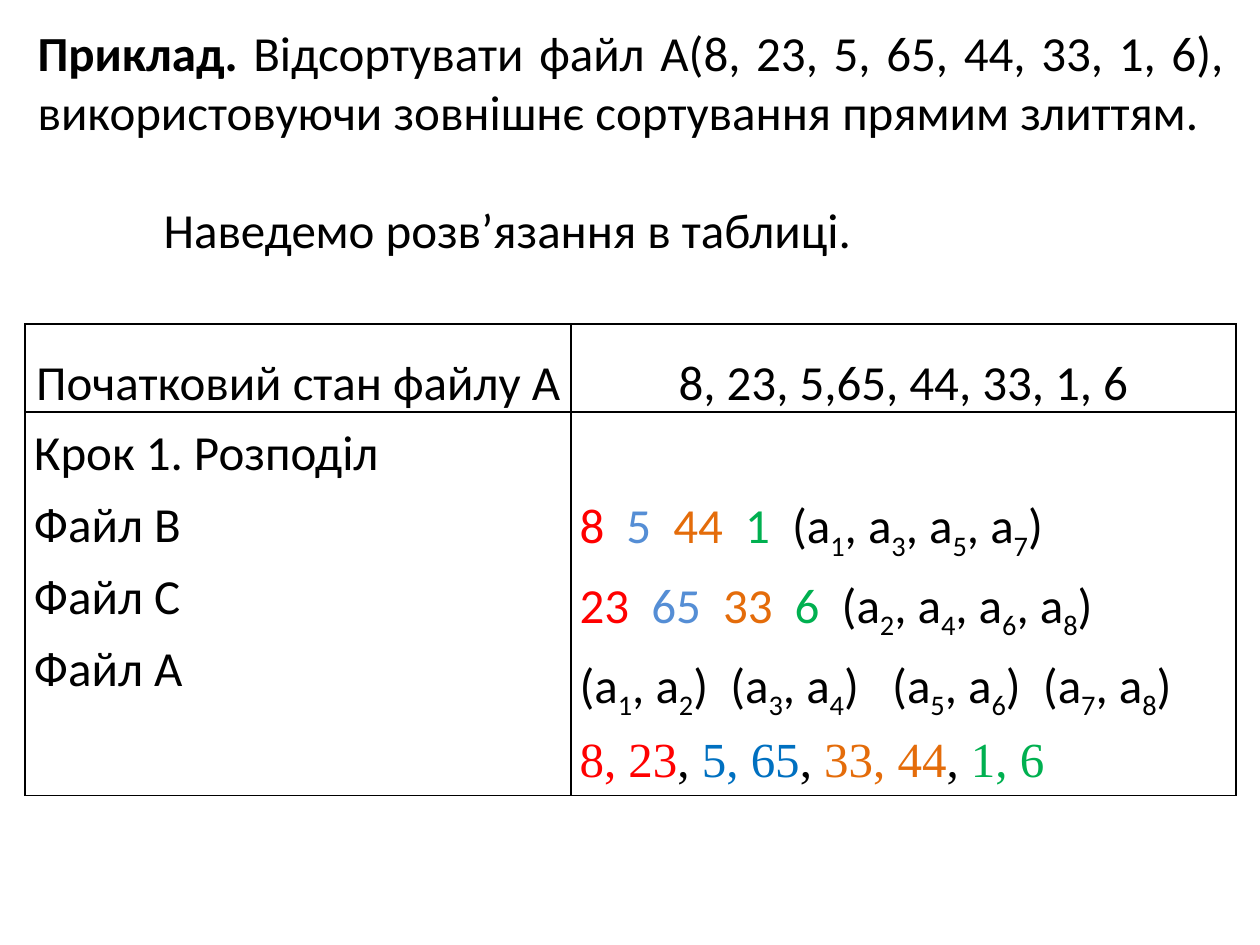
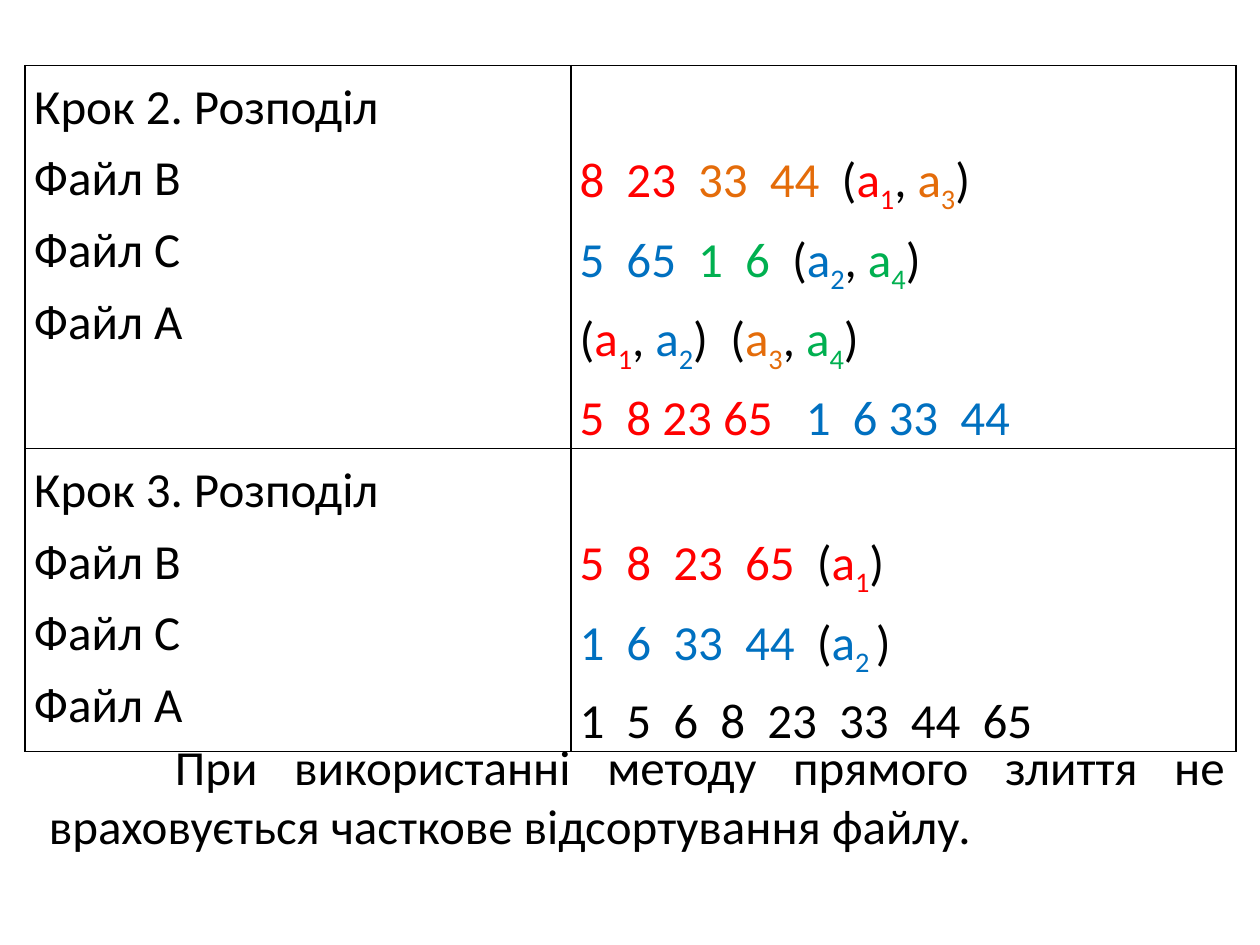
"""Build two slides on external sorting by direct merging."""
from typing import NamedTuple

from pptx import Presentation
from pptx.dml.color import RGBColor
from pptx.enum.text import MSO_AUTO_SIZE, PP_ALIGN
from pptx.oxml import parse_xml
from pptx.oxml.ns import nsdecls
from pptx.util import Inches, Pt

CENTER, JUSTIFY = PP_ALIGN.CENTER, PP_ALIGN.JUSTIFY
GROW = MSO_AUTO_SIZE.SHAPE_TO_FIT_TEXT
BLACK, RED, GREEN = "000000", "FF0000", "00B050"
BLUE, SKY, ORANGE = "0070C0", "558ED5", "E46C0A"
SANS, SERIF = "Calibri", "Times New Roman"
SIZE = Pt(28)
LEFT = 0.2
COLS = (4.33, 5.28)
SIDE, LINE = 0.07, 0.57
TAB = 1.0


class Run(NamedTuple):
    """Hold a piece of text with its look."""
    text: str
    color: str = BLACK
    sub: bool = False
    bold: bool = False
    font: str = SANS


class Para(NamedTuple):
    """Hold the runs and layout of one paragraph."""
    runs: list[Run]
    align: PP_ALIGN = JUSTIFY
    space: float = 1.0
    indent: float = 0
    before: float = 0


class Cell(NamedTuple):
    """Hold the paragraphs and top margin of one cell."""
    paras: list[Para]
    top: float = 0


class Row(NamedTuple):
    """Hold the height and cells of one table row."""
    height: float
    cells: list[Cell]


def rgb(code: str) -> RGBColor:
    """Turn a hex string into a colour."""
    return RGBColor.from_string(code)


def write(frame, paras: list[Para]) -> None:
    """Fill a text frame run by run."""
    frame.word_wrap = True
    for spot, para in enumerate(paras):
        line = frame.add_paragraph() if spot else frame.paragraphs[0]
        line.alignment, line.line_spacing = para.align, para.space
        line.space_before = Pt(para.before)
        if para.indent:
            line._p.get_or_add_pPr().set("indent", str(Inches(para.indent)))
        for item in para.runs:
            run = line.add_run()
            run.text = item.text
            font = run.font
            font.name, font.size, font.bold = item.font, SIZE, item.bold
            font.color.rgb = rgb(item.color)
            if item.sub:
                run._r.get_or_add_rPr().set("baseline", "-25000")


def add_note(slide, left: float, top: float, width: float, height: float,
             paras: list[Para]) -> None:
    """Add a wrapping text box."""
    box = slide.shapes.add_textbox(*map(Inches, (left, top, width, height)))
    write(box.text_frame, paras)
    box.text_frame.auto_size = GROW


def frame_cell(cell) -> None:
    """Draw thin black borders around an unfilled cell."""
    props = cell._tc.get_or_add_tcPr()
    for edge in "LRTB":
        props.append(parse_xml(
            f'<a:ln{edge} {nsdecls("a")} w="{Pt(1)}"><a:solidFill>'
            f'<a:srgbClr val="{BLACK}"/></a:solidFill></a:ln{edge}>'))
    cell.fill.background()


def add_grid(slide, top: float, rows: list[Row]) -> None:
    """Add a bordered table of steps."""
    area = (LEFT, top, sum(COLS), sum(row.height for row in rows))
    table = slide.shapes.add_table(
        len(rows), len(COLS), *map(Inches, area)).table
    table.first_row = table.horz_banding = False
    for col, width in zip(table.columns, COLS):
        col.width = Inches(width)
    for line, row in zip(table.rows, rows):
        line.height = Inches(row.height)
        for cell, data in zip(line.cells, row.cells):
            cell.margin_left = cell.margin_right = Inches(SIDE)
            cell.margin_top, cell.margin_bottom = Inches(data.top), 0
            frame_cell(cell)
            write(cell.text_frame, data.paras)


def group(*terms: tuple[str, str]) -> list[Run]:
    """List indexed terms in brackets, each with its colour."""
    runs = [Run("(")]
    for spot, (index, color) in enumerate(terms):
        if spot:
            runs.append(Run(", "))
        runs += [Run("а", color), Run(index, color, sub=True)]
    return runs + [Run(")")]


def plain(digits: str) -> list[Run]:
    """List black terms in brackets."""
    return group(*((digit, BLACK) for digit in digits))


def head(text: str) -> Cell:
    """Make a centred heading cell."""
    return Cell([Para([Run(text)], CENTER, 1.5)])


def step(number: int, height: float, lines: list[list[Run]]) -> Row:
    """Make the row of one sorting step."""
    names = (f"Крок {number}. Розподіл", "Файл В", "Файл С", "Файл А")
    left = Cell([Para([Run(name)], space=1.2) for name in names])
    right = Cell([Para(runs, space=1.2) for runs in lines], LINE)
    return Row(height, [left, right])


def add_first(slide) -> None:
    """Draw the task and the first step."""
    add_note(slide, LEFT, 0.13, 9.61, 1.99, [
        Para([Run("Приклад. ", bold=True),
              Run("Відсортувати файл А(8, 23, 5, 65, 44, 33, 1, 6), "
                  "використовуючи зовнішнє сортування прямим злиттям.")]),
        Para([Run("Наведемо розв’язання в таблиці.")],
             indent=TAB, before=34)])
    hues = (RED, SKY, ORANGE, GREEN)
    files = [
        [Run(f"{num}  ", hue) for num, hue in zip(nums, hues)] + plain(digits)
        for nums, digits in (((8, 5, 44, 1), "1357"),
                             ((23, 65, 33, 6), "2468"))]
    pairs = [*plain("12"), Run("  "), *plain("34"), Run("   "),
             *plain("56"), Run("  "), *plain("78")]
    merged = []
    for text, hue in (("8, 23", RED), ("5, 65", BLUE),
                      ("33, 44", ORANGE), ("1, 6", GREEN)):
        if merged:
            merged.append(Run(", ", font=SERIF))
        merged.append(Run(text, hue, font=SERIF))
    add_grid(slide, 2.57, [
        Row(0.7, [head("Початковий стан файлу А"),
                  head("8, 23, 5,65, 44, 33, 1, 6")]),
        step(1, 3.03, [*files, pairs, merged])])


def add_second(slide) -> None:
    """Draw the last two steps and the remark."""
    one, two = ("1", RED), ("2", BLUE)
    three, four = ("3", ORANGE), ("4", GREEN)
    add_grid(slide, 0.52, [
        step(2, 3.04, [
            [Run("8  23  ", RED), Run("33  44  ", ORANGE),
             *group(one, three)],
            [Run("5  65  ", BLUE), Run("1  6  ", GREEN), *group(two, four)],
            [*group(one, two), Run("  "), *group(three, four)],
            [Run("5  8 23 65 ", RED), Run("  1  6 33  44", BLUE)]]),
        step(3, 2.4, [
            [Run("5  8  23  65  ", RED), *group(one)],
            [Run("1  6  33  44  ", BLUE), *group(("2 ", BLUE))],
            [Run("1  5  6  8  23  33  44  65")]])])
    add_note(slide, 0.29, 5.8, 9.53, 1.04, [
        Para([Run("При використанні методу прямого злиття не враховується "
                  "часткове відсортування файлу.")], indent=TAB)])


def main() -> None:
    """Build and save the deck."""
    deck = Presentation()
    deck.slide_width, deck.slide_height = Inches(10), Inches(7.5)
    for draw in (add_first, add_second):
        draw(deck.slides.add_slide(deck.slide_layouts[6]))
    deck.save("out.pptx")


if __name__ == "__main__":
    main()
